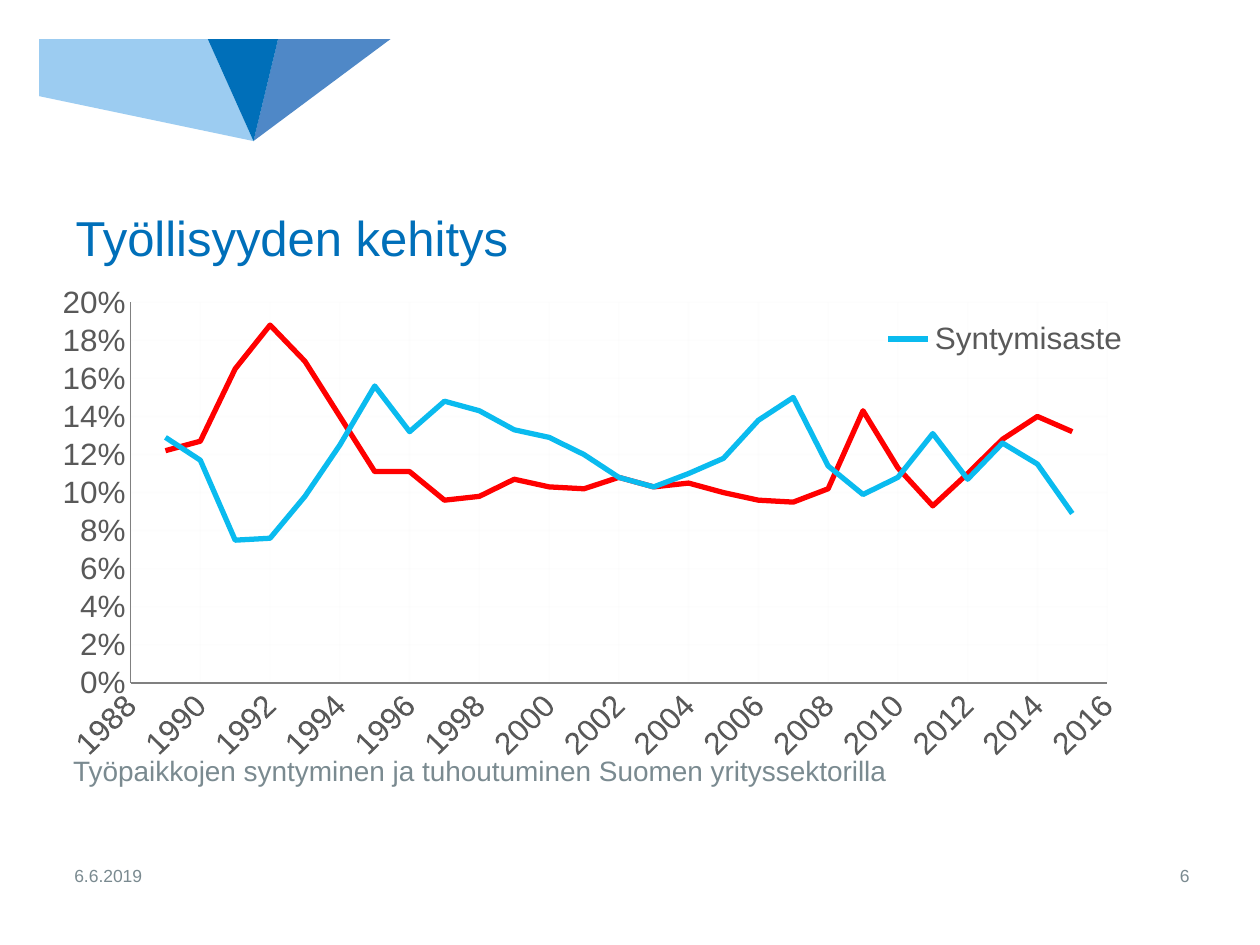
import pptx
import pptx.chart.data
import pptx.dml.color
import pptx.enum.chart
import pptx.enum.text
import pptx.oxml
import pptx.oxml.ns
import pptx.util

Inches = pptx.util.Inches
Pt = pptx.util.Pt
qn = pptx.oxml.ns.qn
FONT = "Arial"
COLORS = {
    "light": "9CCCF1", "blue": "006FB9", "mid": "4F88C7", "gray": "7A8A90",
    "label": "595959", "axis": "808080", "grid": "F2F2F2",
    "birth": "0ABBEF", "death": "FF0000",
}
YEARS = range(1989, 2016)
SERIES = [
    ("Syntymisaste", "birth",
     [0.129, 0.117, 0.075, 0.076, 0.098, 0.125, 0.156, 0.132, 0.148,
      0.143, 0.133, 0.129, 0.12, 0.108, 0.103, 0.11, 0.118, 0.138,
      0.15, 0.114, 0.099, 0.108, 0.131, 0.107, 0.126, 0.115, 0.089]),
    ("Tuhoutumisaste", "death",
     [0.122, 0.127, 0.165, 0.188, 0.169, 0.14, 0.111, 0.111, 0.096,
      0.098, 0.107, 0.103, 0.102, 0.108, 0.103, 0.105, 0.1, 0.096,
      0.095, 0.102, 0.143, 0.113, 0.093, 0.11, 0.128, 0.14, 0.132]),
]


def rgb(name):
    return pptx.dml.color.RGBColor.from_string(COLORS[name])


def box(x, y, w, h):
    return Inches(x), Inches(y), Inches(w), Inches(h)


def set_font(font, size, color):
    font.name = FONT
    font.size = Pt(size)
    font.color.rgb = rgb(color)


def set_line(line, color, width):
    line.color.rgb = rgb(color)
    line.width = Pt(width)


def child(parent, tag, **attrs):
    el = pptx.oxml.parse_xml(f"<{tag} {pptx.oxml.ns.nsdecls(tag.split(':')[0])}/>")
    for key, value in attrs.items():
        el.set(key, str(value))
    parent.append(el)
    return el


def add_emblem(slide, x, y, w, h):
    tip = (x + 0.61 * w, y + h)
    left, right = x + 0.48 * w, x + 0.68 * w
    facets = [
        ("mid", [(x + w, y), (right, y), tip]),
        ("light", [(x, y + 0.56 * h), tip, (left, y), (x, y)]),
        ("blue", [(right, y), (left, y), tip]),
    ]
    for color, points in facets:
        corners = [(Inches(px), Inches(py)) for px, py in points]
        builder = slide.shapes.build_freeform(*corners[0])
        builder.add_line_segments(corners[1:], close=True)
        sp = builder.convert_to_shape()
        sp.shadow.inherit = False
        sp.fill.solid()
        sp.fill.fore_color.rgb = rgb(color)
        sp.line.fill.background()


def fill_placeholder(sp, text, size, color, bounds):
    sp.left, sp.top, sp.width, sp.height = bounds
    tf = sp.text_frame
    tf.auto_size = pptx.enum.text.MSO_AUTO_SIZE.NONE
    p = tf.paragraphs[0]
    p.text = text
    p.alignment = pptx.enum.text.PP_ALIGN.LEFT
    p.space_before = Pt(0)
    set_font(p.font, size, color)
    return p


def add_title(slide, bounds):
    p = fill_placeholder(slide.shapes.title, "Työllisyyden kehitys", 28, "blue", bounds)
    p.line_spacing = 0.95


def add_caption(slide, bounds):
    sp = slide.placeholders[1]
    sp.text_frame.vertical_anchor = pptx.enum.text.MSO_ANCHOR.TOP
    pPr = sp.text_frame.paragraphs[0]._p.get_or_add_pPr()
    pPr.set("marL", "0")
    pPr.set("indent", "0")
    child(pPr, "a:buNone")
    fill_placeholder(sp, "Työpaikkojen syntyminen ja tuhoutuminen Suomen yrityssektorilla",
                     16, "gray", bounds)


def add_footer(slide, text, align, bounds):
    tf = slide.shapes.add_textbox(*bounds).text_frame
    tf.word_wrap = True
    tf.margin_left = tf.margin_right = tf.margin_top = tf.margin_bottom = 0
    tf.vertical_anchor = pptx.enum.text.MSO_ANCHOR.MIDDLE
    p = tf.paragraphs[0]
    p.text = text
    p.alignment = align
    set_font(p.font, 10, "gray")


def place_part(parent, index, x, y, w, h, inner=False):
    for old in parent.findall(qn("c:layout")):
        parent.remove(old)
    layout = child(parent, "c:layout")
    parent.insert(index, layout)
    manual = child(layout, "c:manualLayout")
    if inner:
        child(manual, "c:layoutTarget", val="inner")
    child(manual, "c:xMode", val="edge")
    child(manual, "c:yMode", val="edge")
    for key, value in zip("xywh", (x, y, w, h)):
        child(manual, f"c:{key}", val=value)


def style_axis(axis, low, high, step, number_format):
    axis.minimum_scale, axis.maximum_scale, axis.major_unit = low, high, step
    axis.major_tick_mark = axis.minor_tick_mark = pptx.enum.chart.XL_TICK_MARK.NONE
    axis.tick_labels.number_format = number_format
    axis.tick_labels.number_format_is_linked = False
    set_font(axis.tick_labels.font, 18, "label")
    set_line(axis.format.line, "axis", 0.75)
    axis.has_major_gridlines = True
    line = axis.major_gridlines.format.line
    set_line(line, "grid", 0.75)
    tint = axis.major_gridlines._xAx.find(qn("c:majorGridlines")).find(".//" + qn("a:srgbClr"))
    child(tint, "a:alpha", val=10000)


def add_rate_chart(slide, bounds):
    data = pptx.chart.data.XyChartData()
    for name, _, rates in SERIES:
        series = data.add_series(name)
        for year, rate in zip(YEARS, rates):
            series.add_data_point(year, rate)
    kind = pptx.enum.chart.XL_CHART_TYPE.XY_SCATTER_LINES_NO_MARKERS
    chart = slide.shapes.add_chart(kind, *bounds, data).chart
    chart.has_title = False
    set_font(chart.font, 18, "label")
    plot = chart.plots[0]
    plot.vary_by_categories = False
    for series, (_, color, _) in zip(plot.series, SERIES):
        series.smooth = False
        set_line(series.format.line, color, 3)

    style_axis(chart.category_axis, 1988, 2016, 2, "0")
    style_axis(chart.value_axis, 0, 0.2, 0.02, "0%")
    labels = chart.category_axis._element.find(qn("c:txPr")).find(qn("a:bodyPr"))
    labels.set("rot", "-2700000")
    labels.set("vert", "horz")
    place_part(chart._chartSpace.chart.plotArea, 0, 0.085, 0.058, 0.871, 0.799, inner=True)

    chart.has_legend = True
    chart.legend.position = pptx.enum.chart.XL_LEGEND_POSITION.RIGHT
    chart.legend.include_in_layout = False
    set_font(chart.legend.font, 18, "label")
    legend = chart.legend._element
    place_part(legend, 1, 0.74, 0.08, 0.25, 0.11)
    entry = child(legend, "c:legendEntry")
    legend.insert(1, entry)
    child(entry, "c:idx", val=1)
    child(entry, "c:delete", val=1)


def main():
    prs = pptx.Presentation()
    prs.slide_width, prs.slide_height = Inches(10), Inches(7.5)
    slide = prs.slides.add_slide(prs.slide_layouts[1])
    align = pptx.enum.text.PP_ALIGN
    add_emblem(slide, 0.31, 0.31, 2.79, 0.81)
    add_footer(slide, "6.6.2019", align.LEFT, box(0.59, 6.82, 0.9, 0.25))
    add_footer(slide, "6", align.RIGHT, box(9.02, 6.82, 0.42, 0.25))
    add_title(slide, box(0.5, 1.39, 9, 1.02))
    add_rate_chart(slide, box(0.28, 2.18, 8.9, 3.86))
    add_caption(slide, box(0.48, 5.93, 8.93, 0.66))
    prs.save("out.pptx")


if __name__ == "__main__":
    main()
